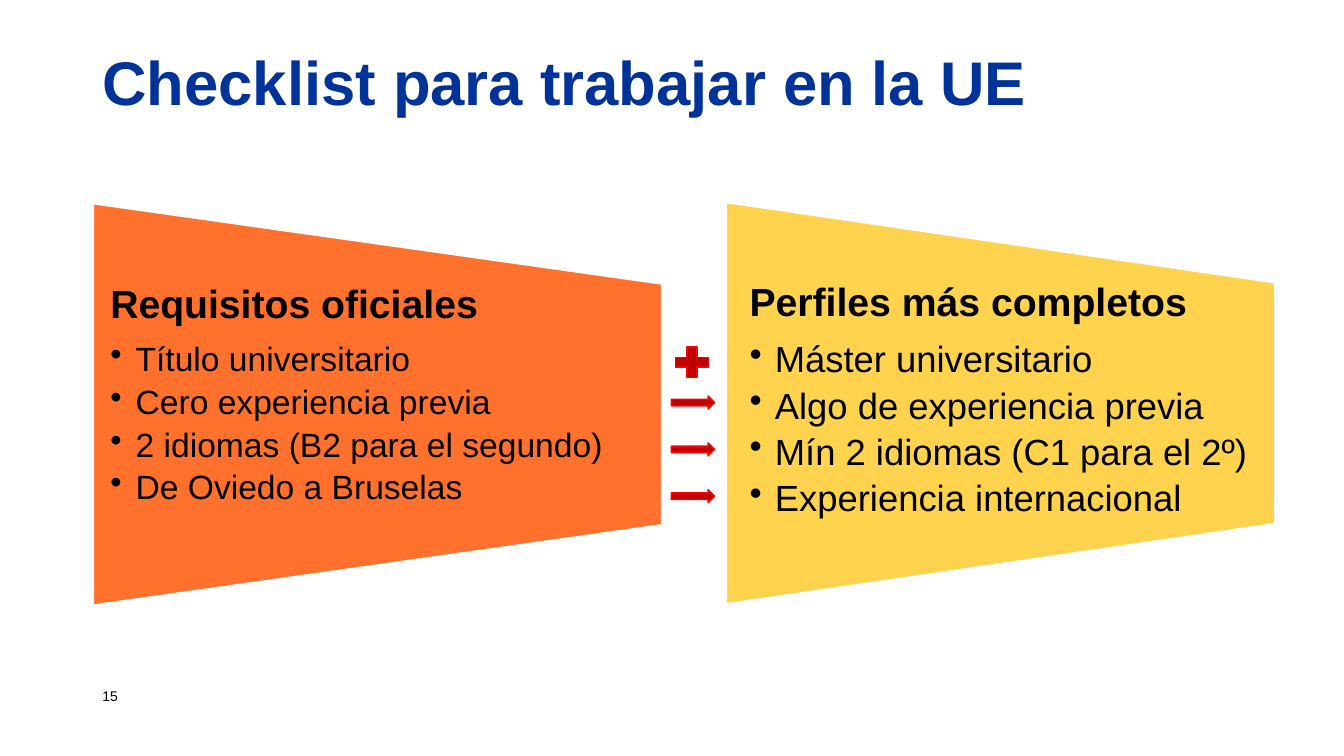
import lxml.etree
import pptx
import pptx.dml.color
import pptx.enum.shapes
import pptx.enum.text
import pptx.oxml.ns
import pptx.util
from pptx.util import Cm

FONT = "Arial"
BLACK = "000000"
SHAPES = pptx.enum.shapes.MSO_SHAPE
ANCHORS = pptx.enum.text.MSO_ANCHOR

PANEL_HEIGHT = 10.11
ARROW_TOP = 9.98
ARROW_PITCH = 1.18


def rgb(color):
    return pptx.dml.color.RGBColor.from_string(color)


def add_preset(slide, preset, left, top, width, height, fill, line):
    shape = slide.shapes.add_shape(preset, Cm(left), Cm(top), Cm(width), Cm(height))
    shape.shadow.inherit = False
    shape.fill.solid()
    shape.fill.fore_color.rgb = rgb(fill)
    shape.line.color.rgb = rgb(line)
    shape.line.width = pptx.util.Pt(1)
    return shape


def add_text_frame(slide, left, top, width, height, anchor, side_inset=0.25, edge_inset=0.13):
    box = slide.shapes.add_textbox(Cm(left), Cm(top), Cm(width), Cm(height))
    frame = box.text_frame
    frame.word_wrap = True
    frame.vertical_anchor = anchor
    frame.margin_left = frame.margin_right = Cm(side_inset)
    frame.margin_top = frame.margin_bottom = Cm(edge_inset)
    return frame


def write_line(paragraph, text, size, color=BLACK, bold=False, line_spacing=0.9, space_after=0):
    paragraph.line_spacing = line_spacing
    paragraph.space_after = pptx.util.Pt(space_after)
    run = paragraph.add_run()
    run.text = text
    run.font.name = FONT
    run.font.size = pptx.util.Pt(size)
    run.font.bold = bold
    run.font.color.rgb = rgb(color)


def add_bullet(paragraph):
    properties = paragraph._p.get_or_add_pPr()
    indent = Cm(0.64)
    properties.set("marL", str(indent))
    properties.set("indent", str(-indent))
    bullet = lxml.etree.SubElement(properties, pptx.oxml.ns.qn("a:buChar"))
    bullet.set("char", "•")


def add_panel(slide, left, top, width, fill, inset, heading, items, item_size):
    """Draw a trapezoid narrowing to the right, with a heading and bullets on it."""
    # The preset narrows downwards, so it is laid out upright and turned about its centre.
    shift = (width - PANEL_HEIGHT) / 2
    trapezoid = add_preset(slide, SHAPES.FLOWCHART_MANUAL_OPERATION,
                           round(left + shift, 2), round(top - shift, 2),
                           PANEL_HEIGHT, width, fill, "FFFFFF")
    trapezoid.rotation = 270

    frame = add_text_frame(slide, left, top + PANEL_HEIGHT / 5, width, PANEL_HEIGHT * 3 / 5,
                           ANCHORS.TOP, inset, 0)
    write_line(frame.paragraphs[0], heading, 28, bold=True, space_after=11.5)
    for item in items:
        paragraph = frame.add_paragraph()
        add_bullet(paragraph)
        write_line(paragraph, item, item_size, space_after=item_size * 0.19)


def add_symbol(slide, preset, left, top, width, height):
    add_preset(slide, preset, left, top, width, height, "C00000", "FF0000")


def main():
    presentation = pptx.Presentation()
    presentation.slide_width = Cm(33.87)
    presentation.slide_height = Cm(19.05)
    slide = presentation.slides.add_slide(presentation.slide_layouts[6])

    title = add_text_frame(slide, 2.33, 1.02, 29.21, 2.26, ANCHORS.MIDDLE)
    write_line(title.paragraphs[0], "Checklist para trabajar en la UE", 44, "003399", bold=True)
    page_number = add_text_frame(slide, 2.33, 17.02, 7.62, 1.02, ANCHORS.MIDDLE)
    write_line(page_number.paragraphs[0], "15", 10, line_spacing=1.0)

    add_panel(slide, 2.36, 5.14, 14.32, "FF712C", 0.42, "Requisitos oficiales", [
        "Título universitario",
        "Cero experiencia previa",
        "2 idiomas (B2 para el segundo)",
        "De Oviedo a Bruselas",
    ], 24)

    add_symbol(slide, SHAPES.MATH_PLUS, 16.87, 8.61, 1.14, 1.04)
    for row in range(3):
        add_symbol(slide, SHAPES.RIGHT_ARROW, 16.92, ARROW_TOP + row * ARROW_PITCH, 1.09, 0.33)

    add_panel(slide, 18.31, 5.11, 13.82, "FFD34E", 0.58, "Perfiles más completos", [
        "Máster universitario",
        "Algo de experiencia previa",
        "Mín 2 idiomas (C1 para el 2º)",
        "Experiencia internacional",
    ], 26)

    presentation.save("out.pptx")


if __name__ == "__main__":
    main()
